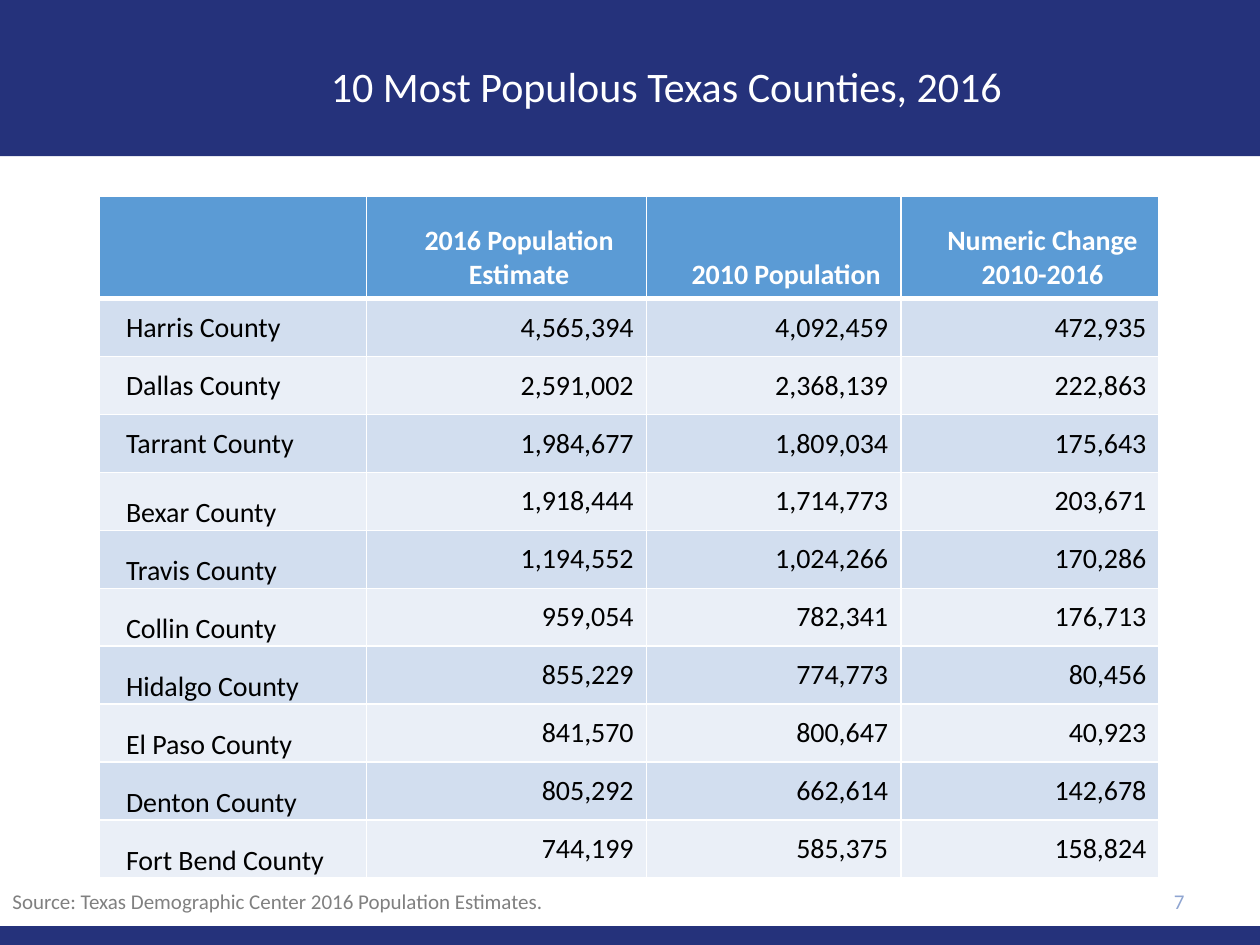
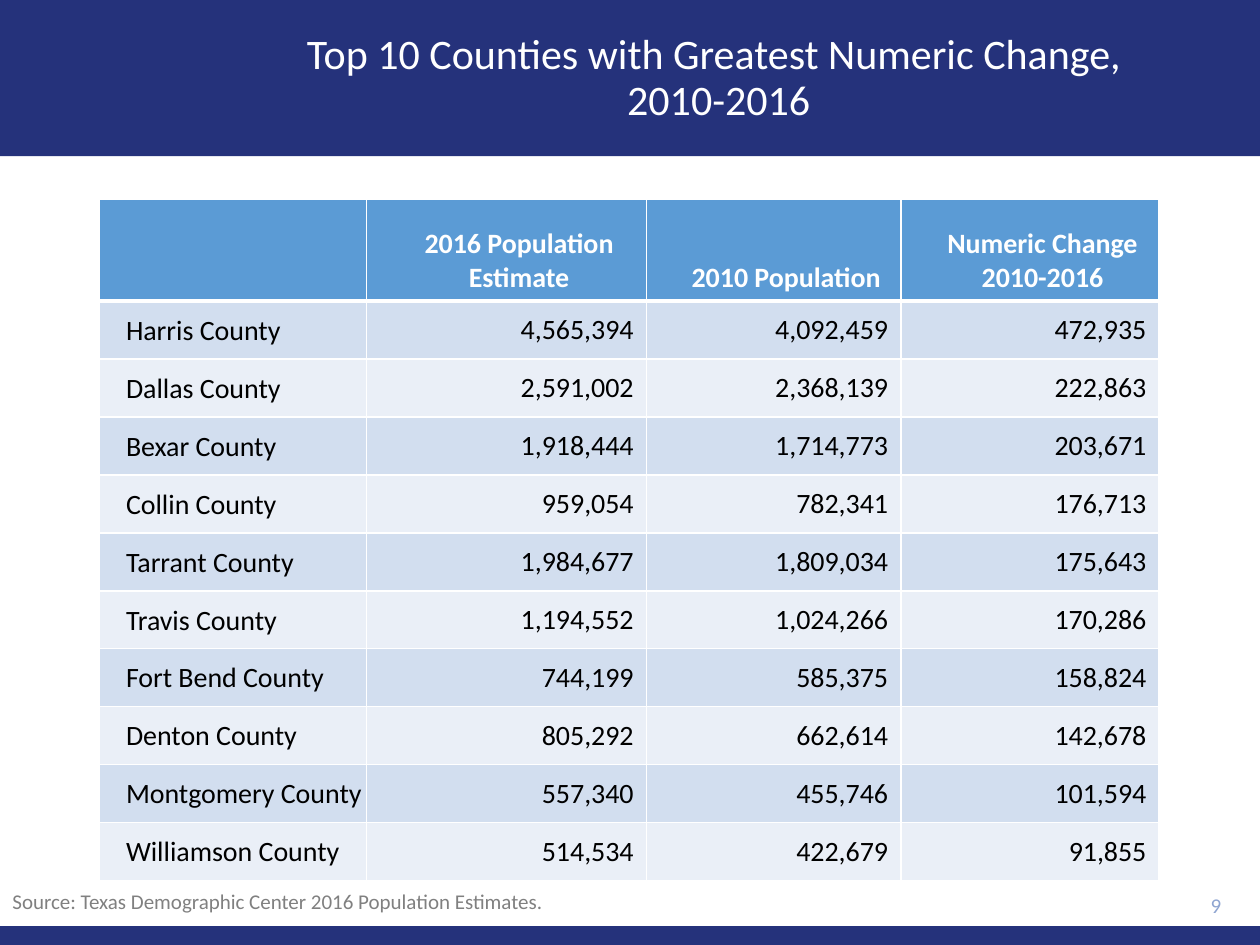
from dataclasses import dataclass

from lxml.etree import SubElement
from pptx import Presentation
from pptx.dml.color import RGBColor as RGB
from pptx.enum.shapes import MSO_SHAPE as Shape
from pptx.enum.text import MSO_ANCHOR as Anchor, MSO_AUTO_SIZE as Fit, PP_ALIGN as Align
from pptx.oxml.ns import qn
from pptx.util import Inches, Pt


@dataclass(frozen=True)
class Theme:
    font: str = "Calibri"
    navy: str = "25327B"
    head: str = "5B9BD5"
    odd: str = "D2DEEF"
    even: str = "EAEFF7"
    white: str = "FFFFFF"
    black: str = "000000"
    gray: str = "808080"
    pale: str = "8FA5D1"
    title: int = 24
    body: int = 16
    small: int = 12


THEME = Theme()
WIDTH, HEIGHT = 10, 7.5

# Table grid, in inches
LEFT = 0.79
COLS = (2.12, 2.22, 2.02, 2.05)
HEAD_ROW, BODY_ROW = 0.81, 0.46
INDENT = 0.2

HEADS = ("", "2016 Population Estimate", "2010 Population",
         "Numeric Change\n2010-2016")
SOURCE = "Source: Texas Demographic Center 2016 Population Estimates."

# County: 2016 estimate, 2010 population
COUNTS = {
    "Harris": (4565394, 4092459),
    "Dallas": (2591002, 2368139),
    "Tarrant": (1984677, 1809034),
    "Bexar": (1918444, 1714773),
    "Travis": (1194552, 1024266),
    "Collin": (959054, 782341),
    "Hidalgo": (855229, 774773),
    "El Paso": (841570, 800647),
    "Denton": (805292, 662614),
    "Fort Bend": (744199, 585375),
    "Montgomery": (557340, 455746),
    "Williamson": (514534, 422679),
}


def top_ten(col):
    """Rank the counties by one column: 1 estimate, 3 change."""
    rows = [(f"{name} County", new, old, new - old)
            for name, (new, old) in COUNTS.items()]
    return sorted(rows, key=lambda row: row[col], reverse=True)[:10]


def inches(*box):
    return [Inches(part) for part in box]


def paint(fill, color):
    fill.solid()
    fill.fore_color.rgb = RGB.from_string(color)


def write(frame, text, size=THEME.body, color=THEME.black, bold=False,
          align=Align.LEFT, indent=0, after=None, line=None):
    """Write text; a newline starts a paragraph, \\v breaks a line."""
    frame.text = text
    for para in frame.paragraphs:
        if indent:
            para._p.get_or_add_pPr().set("marL", str(Inches(indent)))
        para.alignment = align
        para.line_spacing = line
        if after:
            para.space_after = Pt(after)
        for run in para.runs:
            font = run.font
            font.name, font.size, font.bold = THEME.font, Pt(size), bold
            font.color.rgb = RGB.from_string(color)


def add_label(slide, text, box, anchor=Anchor.TOP, **style):
    frame = slide.shapes.add_textbox(*inches(*box)).text_frame
    frame.word_wrap = True
    frame.vertical_anchor = anchor
    write(frame, text, size=THEME.small, **style)


def add_bands(layout, slide):
    """Draw the top and bottom bands and move them to the shared layout."""
    for top, tall in ((0, 1.24), (HEIGHT - 0.15, 0.15)):
        band = slide.shapes.add_shape(Shape.RECTANGLE, *inches(0, top, WIDTH, tall))
        band.shadow.inherit = False
        paint(band.fill, THEME.navy)
        band.line.fill.background()
        layout.shapes.element.insert(2, band.element)


def set_title(slide, text, box):
    title = slide.shapes.title
    title.left, title.top, title.width, title.height = inches(*box)
    frame = title.text_frame
    frame.auto_size = Fit.NONE
    frame.word_wrap = True
    frame.vertical_anchor = Anchor.MIDDLE
    write(frame, text, size=THEME.title, color=THEME.white,
          align=Align.CENTER, line=0.9)


def set_edges(cell, top=1, bottom=1):
    props = cell._tc.get_or_add_tcPr()
    for index, (side, width) in enumerate(zip("LRTB", (1, 1, top, bottom))):
        edge = SubElement(props, qn(f"a:ln{side}"), w=str(Pt(width)))
        fill = SubElement(edge, qn("a:solidFill"))
        SubElement(fill, qn("a:srgbClr"), val=THEME.white)
        props.insert(index, edge)


def fill_head(cell, text):
    paint(cell.fill, THEME.head)
    set_edges(cell, bottom=3)
    cell.vertical_anchor = Anchor.BOTTOM
    write(cell.text_frame, text, color=THEME.white, bold=True,
          align=Align.CENTER, indent=INDENT)


def fill_body(cell, value, row, col, low):
    paint(cell.fill, THEME.odd if row % 2 else THEME.even)
    set_edges(cell, top=3 if row == 1 else 1)
    cell.vertical_anchor = Anchor.MIDDLE
    if col == 0:
        cell.margin_left = cell.margin_right = cell.margin_top = Inches(0.01)
        cell.margin_bottom = 0
        if row >= low:
            cell.vertical_anchor = Anchor.BOTTOM
        write(cell.text_frame, value, indent=INDENT)
    else:
        first = col == 1
        write(cell.text_frame, f"{value:,}", align=Align.RIGHT,
              indent=INDENT if first else 0, after=6 if first else None)


def add_grid(slide, rows, top, low):
    """Add the county table; names sit at the bottom from row low on."""
    tall = HEAD_ROW + BODY_ROW * len(rows)
    table = slide.shapes.add_table(len(rows) + 1, len(COLS),
                                   *inches(LEFT, top, sum(COLS), tall)).table
    for col, width in zip(table.columns, COLS):
        col.width = Inches(width)
    for index, row in enumerate(table.rows):
        row.height = Inches(BODY_ROW if index else HEAD_ROW)
    for col, text in enumerate(HEADS):
        fill_head(table.cell(0, col), text)
    for row, values in enumerate(rows, 1):
        for col, value in enumerate(values):
            fill_body(table.cell(row, col), value, row, col, low)


def add_page(deck, layout, title, title_box, number, number_box, rows, top, low=99):
    slide = deck.slides.add_slide(layout)
    set_title(slide, title, title_box)
    add_label(slide, number, number_box, anchor=Anchor.MIDDLE,
              color=THEME.pale, align=Align.RIGHT)
    add_grid(slide, rows, top, low)
    add_label(slide, SOURCE, (0, 7, 8.75, 0.5), color=THEME.gray)
    return slide


def main():
    deck = Presentation()
    deck.slide_width, deck.slide_height = inches(WIDTH, HEIGHT)
    layout = deck.slide_layouts[5]

    # Title size for line breaks too
    style = deck.slide_master.element.xpath(".//p:titleStyle/a:lvl1pPr/a:defRPr")[0]
    style.set("sz", str(THEME.title * 100))

    # Counties by population
    first = add_page(deck, layout, "10 Most Populous Texas Counties, 2016",
                     (1.25, 0.33, 8.08, 0.75), "7", (7.17, 6.95, 2.33, 0.4),
                     top_ten(1), top=1.56, low=4)
    add_bands(layout, first)

    # Counties by growth
    add_page(deck, layout,
             "Top 10 Counties with Greatest Numeric Change, \v2010-2016",
             (1.53, 0.07, 8.35, 1.11), "9", (8.9, 7.01, 0.89, 0.34),
             top_ten(3), top=1.58)

    deck.save("out.pptx")


if __name__ == "__main__":
    main()
